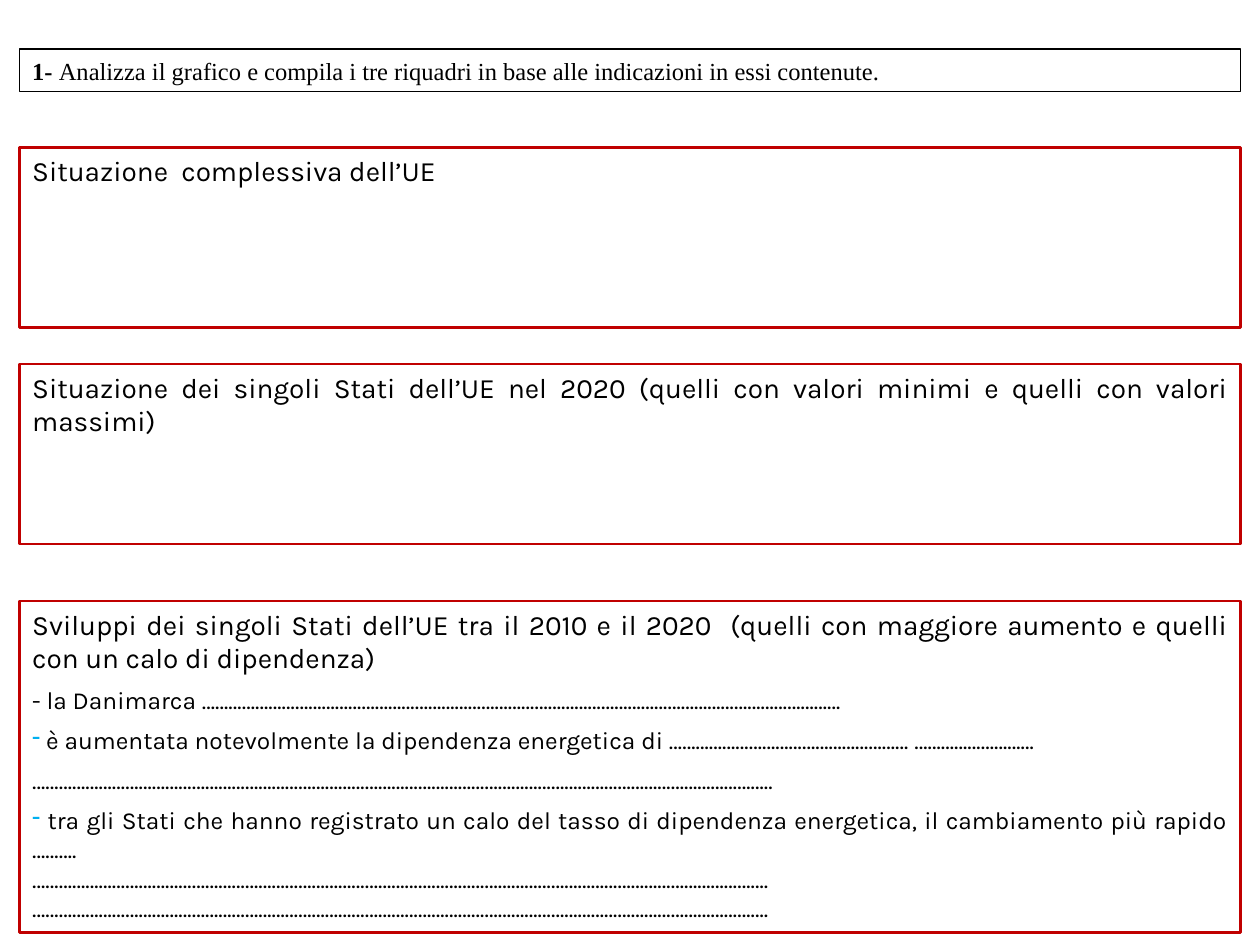
"""Worksheet slide: one instruction and three boxes to fill in."""
from lxml import etree
from pptx import Presentation
from pptx import util as u
from pptx.dml.color import RGBColor
from pptx.enum import shapes, text
from pptx.oxml.ns import qn

BLACK = RGBColor(0, 0, 0)
WHITE = RGBColor(255, 255, 255)
RED = RGBColor(0xC0, 0, 0)
BLUE = RGBColor(0, 0xB0, 0xF0)

LEFT, WIDTH = u.Cm(0.4), u.Cm(24.61)
HEAD = {"size": u.Pt(16), "name": "Karla"}
BODY = {"size": u.Pt(14), "name": "Karla"}
TASK = {"size": u.Pt(14), "name": "Times New Roman"}
GAP = u.Pt(6)
NONE = u.Pt(0)


def dots(count, end=""):
    """Return a dotted line to write on."""
    return "…" * count + end


def add_box(slide, top, height, color, weight, anchor):
    """Add a white framed box and return its text frame."""
    box = slide.shapes.add_shape(
        shapes.MSO_SHAPE.RECTANGLE, LEFT, u.Cm(top), WIDTH, u.Cm(height))
    box.shadow.inherit = False
    box.fill.solid()
    box.fill.fore_color.rgb = WHITE
    box.line.color.rgb = color
    box.line.width = u.Pt(weight)
    form = {"word_wrap": True, "vertical_anchor": anchor,
            "auto_size": text.MSO_AUTO_SIZE.SHAPE_TO_FIT_TEXT}
    for key, value in form.items():
        setattr(box.text_frame, key, value)
    return box.text_frame


def add_run(para, words, form, color=BLACK):
    """Add a run with its font values."""
    run = para.add_run()
    run.text = words
    for key, value in form.items():
        setattr(run.font, key, value)
    run.font.color.rgb = color


def add_para(frame, after=NONE):
    """Return a justified paragraph, using the empty first one if free."""
    first = frame.paragraphs[0]
    para = frame.add_paragraph() if first.runs else first
    form = {"alignment": text.PP_ALIGN.JUSTIFY, "space_after": after}
    for key, value in form.items():
        setattr(para, key, value)
    return para


def add_dash(para):
    """Give the paragraph a blue dash as its bullet."""
    props = para._p.get_or_add_pPr()
    etree.SubElement(props, qn("a:buChar"), char="-")
    add_run(para, " ", BODY, BLUE)


def add_panel(slide, top, height, title):
    """Add a red panel with its title."""
    frame = add_box(slide, top, height, RED, 1.5, text.MSO_ANCHOR.TOP)
    add_run(add_para(frame, GAP), title, HEAD)
    return frame


def add_task(slide):
    """Add the instruction at the top."""
    frame = add_box(slide, 0.99, 0.86, BLACK, 0.75, text.MSO_ANCHOR.MIDDLE)
    para = add_para(frame)
    add_run(para, "1- ", {**TASK, "bold": True})
    add_run(para, "Analizza il grafico e compila i tre riquadri in base alle "
            "indicazioni in essi contenute.", TASK)


def main():
    """Build and save the slide."""
    deck = Presentation()
    deck.slide_width, deck.slide_height = u.Cm(25.4), u.Cm(19.05)
    slide = deck.slides.add_slide(deck.slide_layouts[6])
    last = add_panel(
        slide, 12.12, 6.68,
        "Sviluppi dei singoli Stati dell’UE tra il 2010 e il 2020  (quelli "
        "con maggiore aumento e quelli con un calo di dipendenza)")
    lines = [
        ("- la Danimarca " + dots(48), GAP, False),
        ("è aumentata notevolmente la dipendenza energetica di "
         + dots(18) + " " + dots(9), GAP, True),
        (dots(55, ".."), GAP, False),
        ("tra gli Stati che hanno registrato un calo del tasso di dipendenza "
         "energetica, il cambiamento più rapido " + dots(3, "."), NONE, True),
        (dots(55, "."), NONE, False),
        (dots(55, "."), NONE, False),
    ]
    for words, after, dash in lines:
        para = add_para(last, after)
        if dash:
            add_dash(para)
        add_run(para, words, BODY)
    add_panel(slide, 2.97, 3.63, "Situazione  complessiva dell’UE ")
    add_panel(slide, 7.34, 3.63,
              "Situazione dei singoli Stati dell’UE nel 2020 (quelli con "
              "valori minimi e quelli con valori massimi)")
    add_task(slide)
    deck.save("out.pptx")


if __name__ == "__main__":
    main()
